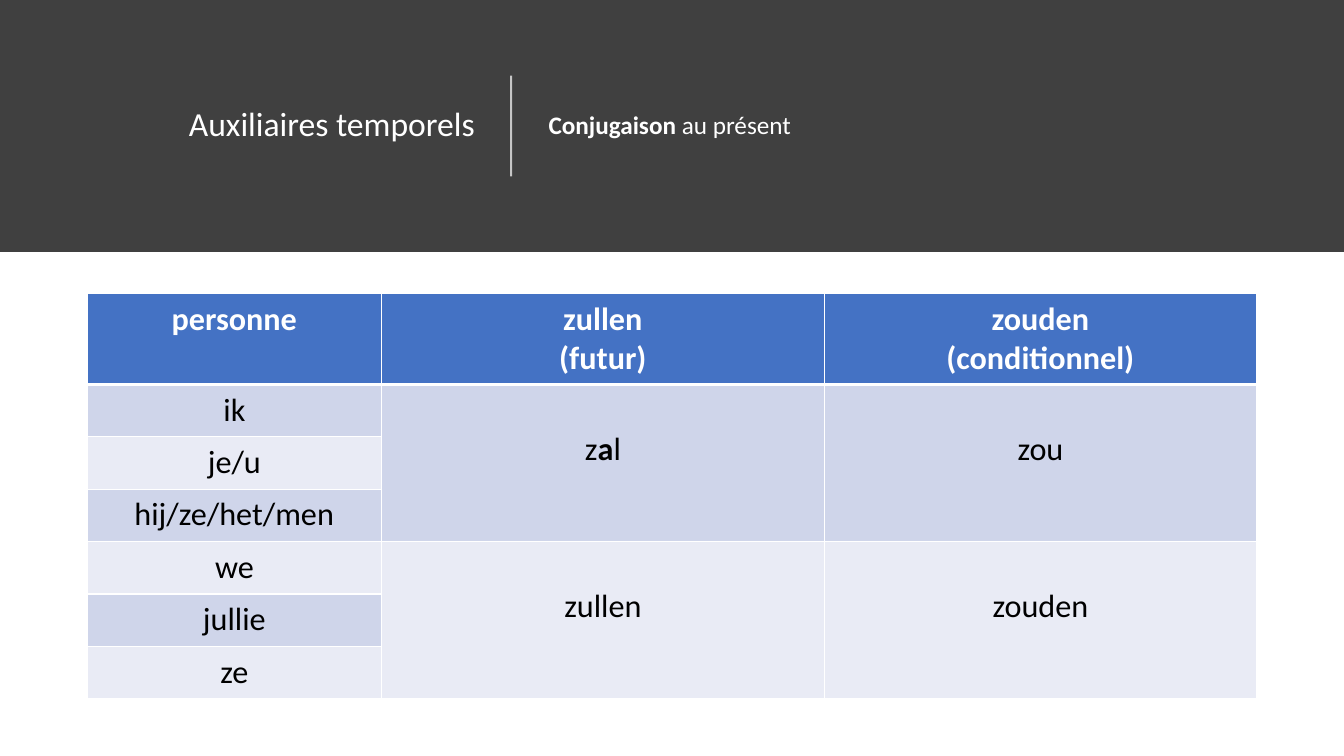
from dataclasses import dataclass

import pptx
import pptx.dml.color
import pptx.enum.shapes
import pptx.enum.text
import pptx.oxml
import pptx.oxml.ns
import pptx.util
from pptx.util import Inches

ALIGN = pptx.enum.text.PP_ALIGN
MIDDLE = pptx.enum.text.MSO_ANCHOR.MIDDLE


@dataclass(frozen=True)
class Theme:
    font: str = "Calibri"
    white: str = "FFFFFF"
    black: str = "000000"
    band: str = "404040"
    header: str = "4472C4"
    stripes: tuple = ("CFD5EA", "E9EBF5")
    title_size: int = 24
    subtitle_size: int = 18
    table_size: int = 23


THEME = Theme()
COLUMNS = (2.91, 4.4, 4.28)
HEADER_HEIGHT, ROW_HEIGHT = 0.9, 0.52
GROUP_SIZE = 3
HEADERS = ("personne", "zullen\n(futur)", "zouden\n(conditionnel)")
PERSONS = ("ik", "je/u", "hij/ze/het/men", "we", "jullie", "ze")
# One line per group of persons; each form is a list of (text, bold) spans.
FORMS = (
    ([("z", False), ("a", True), ("l", False)], [("zou", False)]),
    ([("zullen", False)], [("zouden", False)]),
)


def rgb(value):
    return pptx.dml.color.RGBColor.from_string(value)


def xml(tag, **attributes):
    element = pptx.oxml.parse_xml(f"<{tag} {pptx.oxml.ns.nsdecls('a')}/>")
    for name, value in attributes.items():
        element.set(name, str(value))
    return element


def add_spans(para, spans, size, color):
    for text, bold in spans:
        span = para.add_run()
        span.text = text
        span.font.name = THEME.font
        span.font.size = pptx.util.Pt(size)
        span.font.bold = bold
        span.font.color.rgb = rgb(color)


def add_band(page, width, height):
    band = page.shapes.add_shape(
        pptx.enum.shapes.MSO_SHAPE.RECTANGLE, 0, 0, width, height)
    band.shadow.inherit = False
    band.fill.solid()
    band.fill.fore_color.rgb = rgb(THEME.band)
    band.line.fill.background()
    # Index 2 is the back of the drawing order, behind the placeholders.
    page.shapes.element.insert(2, band.element)


def add_divider(page, x, top, bottom):
    divider = page.shapes.add_connector(
        pptx.enum.shapes.MSO_CONNECTOR.STRAIGHT, x, bottom, x, top)
    divider.line.width = pptx.util.Pt(1.5)
    divider.line.color.rgb = rgb(THEME.white)
    color = divider.element.find(".//" + pptx.oxml.ns.qn("a:srgbClr"))
    color.append(xml("a:alpha", val=70000))
    divider.element.spPr.append(xml("a:effectLst"))


def fill_placeholder(box, place, spans, size, align):
    box.left, box.top, box.width, box.height = map(Inches, place)
    frame = box.text_frame
    frame.word_wrap = True
    frame.auto_size = pptx.enum.text.MSO_AUTO_SIZE.NONE
    frame.vertical_anchor = MIDDLE
    para = frame.paragraphs[0]
    para.alignment = align
    para.line_spacing = 0.9
    para.space_before = pptx.util.Pt(0)
    add_spans(para, spans, size, THEME.white)
    return para


def remove_bullet(para):
    properties = para._p.get_or_add_pPr()
    properties.set("marL", "0")
    properties.set("indent", "0")
    properties.append(xml("a:buNone"))


def style_cell(cell, color, bottom_width=1):
    """Set margins, white borders and fill; borders must precede the fill."""
    cell.margin_left = cell.margin_right = Inches(0.13)
    cell.margin_top = cell.margin_bottom = Inches(0.06)
    properties = cell._tc.get_or_add_tcPr()
    for side in "LRTB":
        width = bottom_width if side == "B" else 1
        border = xml(f"a:ln{side}", w=pptx.util.Pt(width))
        paint = xml("a:solidFill")
        paint.append(xml("a:srgbClr", val=THEME.white))
        border.append(paint)
        properties.append(border)
    cell.fill.solid()
    cell.fill.fore_color.rgb = rgb(color)


def write_cell(cell, lines, color):
    frame = cell.text_frame
    for index, spans in enumerate(lines):
        para = frame.add_paragraph() if index else frame.paragraphs[0]
        para.alignment = ALIGN.CENTER
        add_spans(para, spans, THEME.table_size, color)


def add_conjugation_table(page):
    height = HEADER_HEIGHT + ROW_HEIGHT * len(PERSONS)
    table = page.shapes.add_table(
        len(PERSONS) + 1, len(COLUMNS), Inches(0.87), Inches(2.91),
        Inches(sum(COLUMNS)), Inches(height)).table
    table.horz_banding = False
    for column, width in zip(table.columns, COLUMNS):
        column.width = Inches(width)
    for index, row in enumerate(table.rows):
        row.height = Inches(ROW_HEIGHT if index else HEADER_HEIGHT)

    for column, header in enumerate(HEADERS):
        cell = table.cell(0, column)
        style_cell(cell, THEME.header, bottom_width=3)
        lines = [[(line, True)] for line in header.split("\n")]
        write_cell(cell, lines, THEME.white)

    for index, person in enumerate(PERSONS):
        person_cell = table.cell(index + 1, 0)
        style_cell(person_cell, THEME.stripes[index % 2])
        write_cell(person_cell, [[(person, False)]], THEME.black)
        for column in range(1, len(COLUMNS)):
            style_cell(table.cell(index + 1, column),
                       THEME.stripes[index // GROUP_SIZE])

    for group, forms in enumerate(FORMS):
        first = 1 + group * GROUP_SIZE
        for column, spans in enumerate(forms, start=1):
            cell = table.cell(first, column)
            cell.merge(table.cell(first + GROUP_SIZE - 1, column))
            cell.margin_top = Inches(0.45)
            write_cell(cell, [spans], THEME.black)


def main():
    deck = pptx.Presentation()
    deck.slide_width, deck.slide_height = Inches(13.33), Inches(7.5)
    page = deck.slides.add_slide(deck.slide_layouts[1])
    add_band(page, deck.slide_width, Inches(2.5))
    fill_placeholder(page.shapes.title, (0.87, 0.52, 3.94, 1.45),
                     [("Auxiliaires temporels", False)],
                     THEME.title_size, ALIGN.RIGHT)
    add_divider(page, Inches(5.07), Inches(0.75), Inches(1.75))
    subtitle = fill_placeholder(
        page.placeholders[1], (5.34, 0.45, 7.12, 1.6),
        [("Conjugaison", True), (" au présent", False)],
        THEME.subtitle_size, ALIGN.LEFT)
    remove_bullet(subtitle)
    add_conjugation_table(page)
    deck.save("out.pptx")


if __name__ == "__main__":
    main()
